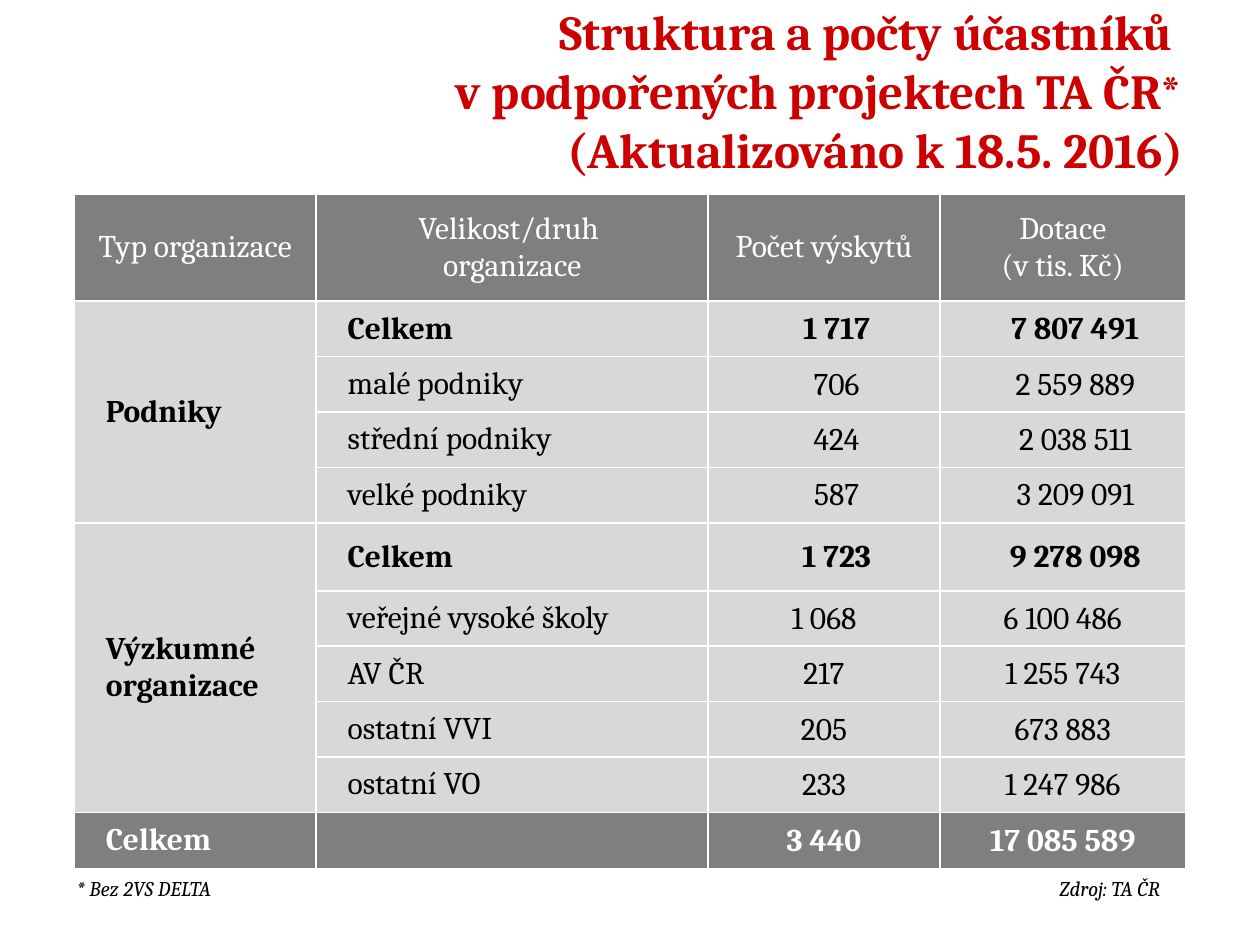
from lxml.etree import SubElement
from pptx import Presentation
from pptx.dml.color import RGBColor
from pptx.enum.text import MSO_ANCHOR as Anchor, MSO_AUTO_SIZE as AutoSize, PP_ALIGN as Align
from pptx.oxml.ns import qn
from pptx.util import Inches, Pt

COLORS = {"red": "CC0000", "dark": "7F7F7F", "light": "D8D8D8", "white": "FFFFFF", "black": "000000"}
COLUMN_WIDTHS = [1.92, 3.11, 1.84, 1.95]
ROW_HEIGHTS = [0.85] + [0.44] * 4 + [0.54] + [0.44] * 4 + [0.45]
ROWS = [
    ["Typ organizace", "Velikost/druh \norganizace", "Počet výskytů", "Dotace\n(v tis. Kč)"],
    ["Podniky", "Celkem", "1 717", "7 807 491"],
    ["", "malé podniky", "706", "2 559 889"],
    ["", "střední podniky", "424", "2 038 511"],
    ["", "velké podniky", "587", "3 209 091"],
    ["Výzkumné\norganizace", "Celkem", "1 723", "9 278 098"],
    ["", "veřejné vysoké školy", "1 068", "6 100 486"],
    ["", "AV ČR", "217", "1 255 743"],
    ["", "ostatní VVI", "205", "673 883"],
    ["", "ostatní VO", "233", "1 247 986"],
    ["Celkem", "", "3 440", "17 085 589"],
]
COMPANY_TOTAL, RESEARCH_TOTAL, GRAND_TOTAL = 1, 5, 10


class SlideBuilder:
    font_name = "Cambria"

    def __init__(self, slide):
        self.slide = slide

    def add_run(self, paragraph, text, size, color, bold=False, italic=False):
        run = paragraph.add_run()
        run.text = text
        font = run.font
        font.name, font.size = self.font_name, Pt(size)
        font.bold, font.italic = bold, italic
        font.color.rgb = RGBColor.from_string(COLORS[color])

    def place_title(self, lines, left, top, width, height):
        title = self.slide.shapes.title
        title.left, title.top = Inches(left), Inches(top)
        title.width, title.height = Inches(width), Inches(height)
        frame = title.text_frame
        frame.word_wrap, frame.auto_size = True, AutoSize.NONE
        frame.vertical_anchor = Anchor.MIDDLE
        paragraph = frame.paragraphs[0]
        paragraph.alignment = Align.RIGHT
        for index, line in enumerate(lines):
            if index:
                paragraph.add_line_break()
            self.add_run(paragraph, line, 28, "red", bold=True)

    def add_note(self, text, left, top, width, height):
        frame = self.slide.shapes.add_textbox(
            Inches(left), Inches(top), Inches(width), Inches(height)).text_frame
        frame.word_wrap, frame.auto_size = True, AutoSize.SHAPE_TO_FIT_TEXT
        self.add_run(frame.paragraphs[0], text, 12, "black", italic=True)

    def add_borders(self, cell):
        properties = cell._tc.get_or_add_tcPr()
        for side in ("a:lnL", "a:lnR", "a:lnT", "a:lnB"):
            line = SubElement(properties, qn(side), w=str(Pt(1)))
            fill = SubElement(line, qn("a:solidFill"))
            SubElement(fill, qn("a:srgbClr"), val=COLORS["white"])

    def fill_cell(self, cell, text, row, column):
        is_header = row == 0
        is_dark = row in (0, GRAND_TOTAL)
        is_number = column > 1 and not is_header
        is_bold = not is_header and (
            column == 0 or row in (COMPANY_TOTAL, RESEARCH_TOTAL, GRAND_TOTAL))
        is_indented = not is_header and (column < 2 or row <= RESEARCH_TOTAL)
        self.add_borders(cell)
        cell.fill.solid()
        cell.fill.fore_color.rgb = RGBColor.from_string(COLORS["dark" if is_dark else "light"])
        cell.vertical_anchor = Anchor.MIDDLE
        margin = Inches(0.01 if is_number else 0.05)
        cell.margin_left = cell.margin_right = cell.margin_top = margin
        cell.margin_bottom = 0 if is_number else margin
        if not text:
            return
        frame = cell.text_frame
        for index, line in enumerate(text.split("\n")):
            paragraph = frame.add_paragraph() if index else frame.paragraphs[0]
            paragraph.alignment = Align.CENTER if is_header or is_number else Align.LEFT
            if is_indented:
                properties = paragraph._p.get_or_add_pPr()
                properties.set("marL", str(Inches(0.2)))
                properties.set("indent", "0")
            self.add_run(paragraph, line, 18, "white" if is_dark else "black", bold=is_bold)

    def add_table(self, rows, left, top):
        table = self.slide.shapes.add_table(
            len(rows), len(COLUMN_WIDTHS), Inches(left), Inches(top),
            Inches(sum(COLUMN_WIDTHS)), Inches(sum(ROW_HEIGHTS))).table
        table.first_row = table.horz_banding = False
        for column, width in zip(table.columns, COLUMN_WIDTHS):
            column.width = Inches(width)
        for row, height in zip(table.rows, ROW_HEIGHTS):
            row.height = Inches(height)
        for row, texts in enumerate(rows):
            for column, text in enumerate(texts):
                self.fill_cell(table.cell(row, column), text, row, column)
        for first, after in ((COMPANY_TOTAL, RESEARCH_TOTAL), (RESEARCH_TOTAL, GRAND_TOTAL)):
            table.cell(first, 0).merge(table.cell(after - 1, 0))


def main():
    presentation = Presentation()
    presentation.slide_width, presentation.slide_height = Inches(10), Inches(7.5)
    builder = SlideBuilder(presentation.slides.add_slide(presentation.slide_layouts[5]))
    builder.place_title(
        ["Struktura a počty účastníků ", "v podpořených projektech TA ČR*",
         "(Aktualizováno k 18.5. 2016)"], 1.46, 0.36, 8.03, 0.71)
    builder.add_table(ROWS, 0.59, 1.54)
    builder.add_note("Zdroj: TA ČR", 8.31, 6.9, 1.81, 0.3)
    builder.add_note("* Bez 2VS DELTA", 0.51, 6.9, 6.96, 0.3)
    presentation.save("out.pptx")


if __name__ == "__main__":
    main()
